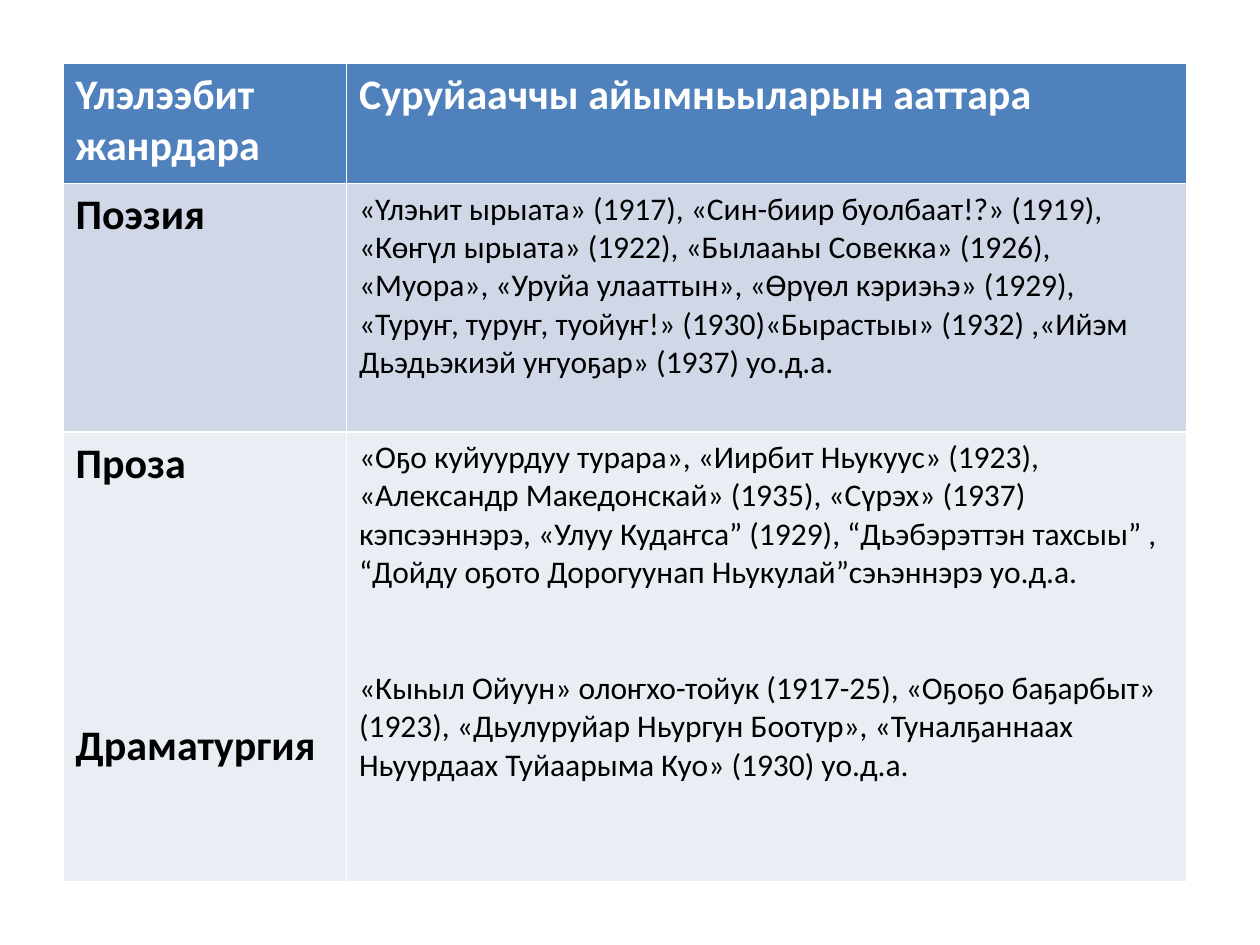
from dataclasses import dataclass

import pptx
import pptx.dml.color
import pptx.table
import pptx.util

Pt = pptx.util.Pt
Color = pptx.dml.color.RGBColor


@dataclass(frozen=True)
class Theme:
    font: str = "Calibri"
    heading_size: int = 24
    body_size: int = 18
    header_text: Color = Color(0xFF, 0xFF, 0xFF)
    text: Color = Color(0, 0, 0)
    header_fill: Color = Color(0x4F, 0x81, 0xBD)
    band_fills: tuple[Color, Color] = (
        Color(0xD0, 0xD8, 0xE8),
        Color(0xE9, 0xED, 0xF4),
    )


@dataclass(frozen=True)
class GenreRow:
    height: float
    genres: list[str]
    works: list[str]
    genre_gap: float = 0  # space before each later paragraph
    works_gap: float = 0


THEME = Theme()
LEFT, TOP = 36, 36
COLUMN_WIDTHS = (162, 480.25)

HEADER = GenreRow(69, ["Үлэлээбит жанрдара"], ["Суруйааччы айымньыларын ааттара"])
GENRES = [
    GenreRow(
        142,
        ["Поэзия"],
        [
            "«Үлэһит ырыата» (1917), «Син-биир буолбаат!?» (1919), "
            "«Көҥүл ырыата» (1922), «Былааһы Совекка» (1926), "
            "«Муора», «Уруйа улааттын», «Өрүөл кэриэһэ» (1929), "
            "«Туруҥ, туруҥ, туойуҥ!» (1930)«Бырастыы» (1932) ,«Ийэм "
            "Дьэдьэкиэй уҥуоҕар» (1937) уо.д.а."
        ],
    ),
    GenreRow(
        257,
        ["Проза", "Драматургия"],
        [
            "«Оҕо куйуурдуу турара», «Иирбит Ньукуус» (1923), "
            "«Александр Македонскай» (1935), «Сүрэх» (1937) "
            "кэпсээннэрэ, «Улуу Кудаҥса” (1929), “Дьэбэрэттэн тахсыы” , "
            "“Дойду оҕото Дорогуунап Ньукулай”сэһэннэрэ уо.д.а.",
            "«Кыһыл Ойуун» олоҥхо-тойук (1917-25), «Оҕоҕо баҕарбыт» "
            "(1923), «Дьулуруйар Ньургун Боотур», «Туналҕаннаах "
            "Ньуурдаах Туйаарыма Куо» (1930) уо.д.а.",
        ],
        genre_gap=132,
        works_gap=44,
    ),
]


def fill_cell(cell: pptx.table._Cell, texts: list[str], fill: Color,
              color: Color, heading: bool, gap: float = 0) -> None:
    """Write one paragraph per text and format the cell."""
    cell.fill.solid()
    cell.fill.fore_color.rgb = fill
    cell.text_frame.text = "\n".join(texts)
    for index, para in enumerate(cell.text_frame.paragraphs):
        if index:
            para.space_before = Pt(gap)
        for span in para.runs:
            span.font.name = THEME.font
            span.font.size = Pt(THEME.heading_size if heading else THEME.body_size)
            span.font.bold = heading
            span.font.color.rgb = color


def main() -> None:
    deck = pptx.Presentation()
    deck.slide_width, deck.slide_height = Pt(720), Pt(540)
    page = deck.slides.add_slide(deck.slide_layouts[6])

    # Table grid; its built-in style draws the white rules
    rows = [HEADER, *GENRES]
    table = page.shapes.add_table(
        len(rows), len(COLUMN_WIDTHS), Pt(LEFT), Pt(TOP),
        Pt(sum(COLUMN_WIDTHS)), Pt(sum(row.height for row in rows)),
    ).table
    for column, width in zip(table.columns, COLUMN_WIDTHS):
        column.width = Pt(width)

    # Header and genre rows
    fills = [THEME.header_fill, *THEME.band_fills]
    for index, (row, fill) in enumerate(zip(rows, fills)):
        is_header = index == 0
        color = THEME.header_text if is_header else THEME.text
        table.rows[index].height = Pt(row.height)
        fill_cell(table.cell(index, 0), row.genres, fill, color, True, row.genre_gap)
        fill_cell(table.cell(index, 1), row.works, fill, color, is_header, row.works_gap)

    deck.save("out.pptx")


if __name__ == "__main__":
    main()
